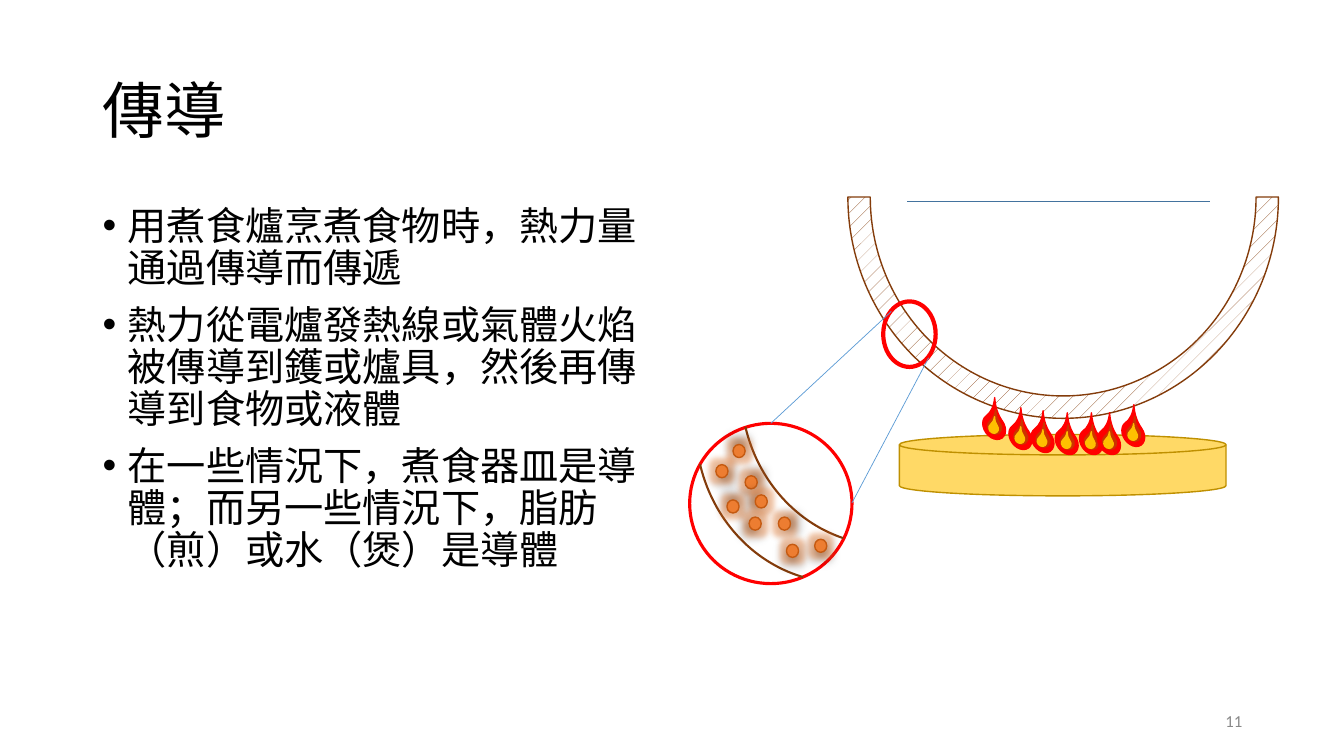
from lxml import etree
from pptx import Presentation
from pptx.dml.color import RGBColor
from pptx.enum.dml import MSO_PATTERN
from pptx.enum.shapes import MSO_CONNECTOR, MSO_SHAPE
from pptx.enum.text import MSO_ANCHOR, PP_ALIGN
from pptx.oxml import parse_xml
from pptx.oxml.ns import nsdecls, qn
from pptx.util import Inches, Pt

# ---- Content ----
TITLE = "傳導"
POINTS = [
    "用煮食爐烹煮食物時，熱力量通過傳導而傳遞",
    "熱力從電爐發熱線或氣體火焰被傳導到鑊或爐具，然後再傳導到食物或液體",
    "在一些情況下，煮食器皿是導體；而另一些情況下，脂肪（煎）或水（煲）是導體",
]
PAGE_NUMBER = "11"
FONT = "Calibri"
COLORS = {
    "text": "000000", "number": "898989", "wok": "843C0B", "white": "FFFFFF",
    "stove": "FFD966", "stove_edge": "BF9000", "red": "FF0000", "ember": "CC3300",
    "yellow": "FFC000", "water": "43739E", "ray": "5B9BD5",
    "particle": "ED7D31", "particle_edge": "C55A11",
}

# Left and top of each flame; layers are dx, dy, width, height, rotation, colour
FLAMES = [(9.76, 4.1), (10.02, 4.2), (10.24, 4.23), (10.48, 4.25),
          (10.72, 4.25), (10.9, 4.25), (11.14, 4.17)]
FLAME_LAYERS = [
    (0, 0, 0.2, 0.27, 324.6, "red"),
    (0.04, 0.06, 0.13, 0.15, 322.6, "ember"),
    (0.05, 0.1, 0.09, 0.1, 322.6, "yellow"),
]
# Left, top and shadow direction of each heated particle
PARTICLES = [(7.27, 4.41, 270), (7.39, 4.72, 315), (7.49, 4.91, 180),
             (7.72, 5.13, 0), (7.21, 4.96, 270), (8.08, 5.35, 90),
             (7.1, 4.61, 45), (7.43, 5.13, 135), (7.8, 5.4, 90)]
# Left, top and start angle of each wall edge under the lens
WALL_EDGES = [(6.9, 2.7, 172.08), (7.35, 2.33, 173.29)]
# Water surface: start point, then two handles and an end point per curve
WATER_START = (8.69, 2.33)
WATER_CURVES = [
    (8.7, 2.29, 8.72, 2.25, 8.76, 2.26), (8.8, 2.27, 8.89, 2.38, 8.95, 2.39),
    (9.01, 2.4, 9.05, 2.3, 9.12, 2.3), (9.18, 2.3, 9.29, 2.4, 9.35, 2.41),
    (9.41, 2.41, 9.4, 2.32, 9.47, 2.32), (9.54, 2.31, 9.7, 2.38, 9.78, 2.37),
    (9.85, 2.37, 9.85, 2.28, 9.92, 2.28), (9.99, 2.28, 10.13, 2.39, 10.2, 2.39),
    (10.27, 2.39, 10.26, 2.3, 10.34, 2.3), (10.43, 2.3, 10.61, 2.4, 10.72, 2.39),
    (10.83, 2.38, 10.94, 2.27, 11, 2.26), (11.06, 2.26, 11.07, 2.35, 11.1, 2.35),
    (11.12, 2.36, 11.12, 2.3, 11.17, 2.3), (11.21, 2.3, 11.3, 2.36, 11.38, 2.35),
    (11.45, 2.35, 11.55, 2.27, 11.61, 2.28), (11.68, 2.29, 11.69, 2.41, 11.76, 2.43),
    (11.82, 2.44, 11.93, 2.36, 11.99, 2.35), (12.06, 2.35, 12.07, 2.4, 12.13, 2.39),
    (12.2, 2.38, 12.32, 2.31, 12.37, 2.32), (12.42, 2.32, 12.42, 2.36, 12.42, 2.41),
]

prs = Presentation()
prs.slide_width, prs.slide_height = Inches(13.33), Inches(7.5)
slide = prs.slides.add_slide(prs.slide_layouts[6])


def rgb(name):
    return RGBColor.from_string(COLORS[name])


def style(shape, fill, edge, weight):
    shape.shadow.inherit = False
    if fill:
        shape.fill.solid()
        shape.fill.fore_color.rgb = rgb(fill)
    else:
        shape.fill.background()
    shape.line.color.rgb = rgb(edge)
    shape.line.width = Pt(weight)


def add_shape(kind, box, fill, edge, weight=1, adj=(), flip="", rotation=0, parent=slide):
    shape = parent.shapes.add_shape(kind, *map(Inches, box))
    style(shape, fill, edge, weight)
    for i, value in enumerate(adj):
        shape.adjustments[i] = value
    shape.rotation = rotation
    for axis in flip:
        shape._element.spPr.xfrm.set("flip" + axis, "1")
    return shape


def add_text(box, lines, size, color, anchor=MSO_ANCHOR.TOP, spacing=None, align=None):
    frame = slide.shapes.add_textbox(*map(Inches, box)).text_frame
    frame.word_wrap = True
    frame.vertical_anchor = anchor
    frame.text = "\n".join(lines)
    for paragraph in frame.paragraphs:
        paragraph.line_spacing = spacing
        paragraph.alignment = align
        font = paragraph.runs[0].font
        font.name, font.size, font.color.rgb = FONT, Pt(size), rgb(color)
    return frame


def add_ray(start, end):
    ray = slide.shapes.add_connector(MSO_CONNECTOR.STRAIGHT, *map(Inches, start + end))
    ray.line.color.rgb = rgb("ray")
    ray.line.width = Pt(0.5)
    etree.SubElement(ray._element.spPr, qn("a:effectLst"))
    return ray


# ---- Wok ----
wok = add_shape(MSO_SHAPE.BLOCK_ARC, (8.41, -0.24, 4.27, 4.39), None, "wok",
                adj=(108, 0, 0.052), flip="V")
wok.fill.patterned()
wok.fill.pattern = MSO_PATTERN.PERCENT_5
wok.fill.fore_color.rgb = rgb("wok")
wok.fill.back_color.rgb = rgb("white")

# ---- Title and points ----
add_text((0.92, 0.4, 11.5, 1.45), [TITLE], 44, "text", MSO_ANCHOR.MIDDLE, 0.9)
points = add_text((0.92, 2, 5.67, 4.76), POINTS, 28, "text", spacing=0.9)
for point in points.paragraphs:
    point.space_before = Pt(10)
    props = point._p.get_or_add_pPr()
    props.set("marL", str(Inches(0.25)))
    props.set("indent", str(-Inches(0.25)))
    etree.SubElement(props, qn("a:buFont")).set("typeface", "Arial")
    etree.SubElement(props, qn("a:buChar")).set("char", "•")

# ---- Stove and flames ----
add_shape(MSO_SHAPE.FLOWCHART_MAGNETIC_DISK, (8.92, 4.31, 3.24, 0.61), "stove", "stove_edge")
for left, top in FLAMES:
    flame = slide.shapes.add_group_shape()
    for dx, dy, width, height, rotation, color in FLAME_LAYERS:
        add_shape(MSO_SHAPE.TEAR, (left + dx, top + dy, width, height), color, color,
                  adj=(1.728,), rotation=rotation, parent=flame)

# ---- Water surface: each three segments become one curve ----
builder = slide.shapes.build_freeform(*WATER_START, scale=Inches(1))
for curve in WATER_CURVES:
    builder.add_line_segments(list(zip(curve[::2], curve[1::2])), close=False)
water = builder.convert_to_shape()
style(water, None, "water", 1)
segments = list(water._element.iter(qn("a:lnTo")))
for i in range(0, len(segments), 3):
    bezier = etree.Element(qn("a:cubicBezTo"))
    segments[i].addprevious(bezier)
    for segment in segments[i:i + 3]:
        bezier.append(segment[0])
        segment.getparent().remove(segment)

# ---- Magnified spot, lens and rays ----
add_shape(MSO_SHAPE.FLOWCHART_CONNECTOR, (8.76, 2.99, 0.52, 0.65), None, "red", 3)
lens = add_shape(MSO_SHAPE.FLOWCHART_CONNECTOR, (6.84, 4.2, 1.61, 1.59), None, "red", 2.25)
add_ray((8.84, 3.09), (7.65, 4.2)).end_connect(lens, 0)
add_ray((9.21, 3.55), (8.45, 4.99))
for left, top, start in WALL_EDGES:
    add_shape(MSO_SHAPE.ARC, (left, top, 2.86, 3.08), None, "wok", 1.5,
              adj=(start, 208.93), flip="HV", rotation=357)

# ---- Heated particles with glow and shadow ----
for left, top, direction in PARTICLES:
    particle = add_shape(MSO_SHAPE.FLOWCHART_CONNECTOR, (left, top, 0.12, 0.13),
                         "particle", "particle_edge")
    effects = particle._element.spPr.find(qn("a:effectLst"))
    effects.append(parse_xml(
        f'<a:glow {nsdecls("a")} rad="{Pt(8)}"><a:srgbClr val="{COLORS["particle"]}">'
        '<a:alpha val="40000"/></a:srgbClr></a:glow>'))
    effects.append(parse_xml(
        f'<a:outerShdw {nsdecls("a")} blurRad="{Pt(4)}" dist="{Pt(3)}" '
        f'dir="{direction * 60000}" rotWithShape="0"><a:srgbClr val="{COLORS["text"]}">'
        '<a:alpha val="40000"/></a:srgbClr></a:outerShdw>'))

# ---- Page number ----
add_text((9.42, 6.95, 3, 0.4), [PAGE_NUMBER], 12, "number", MSO_ANCHOR.MIDDLE,
         align=PP_ALIGN.RIGHT)

prs.save("out.pptx")
